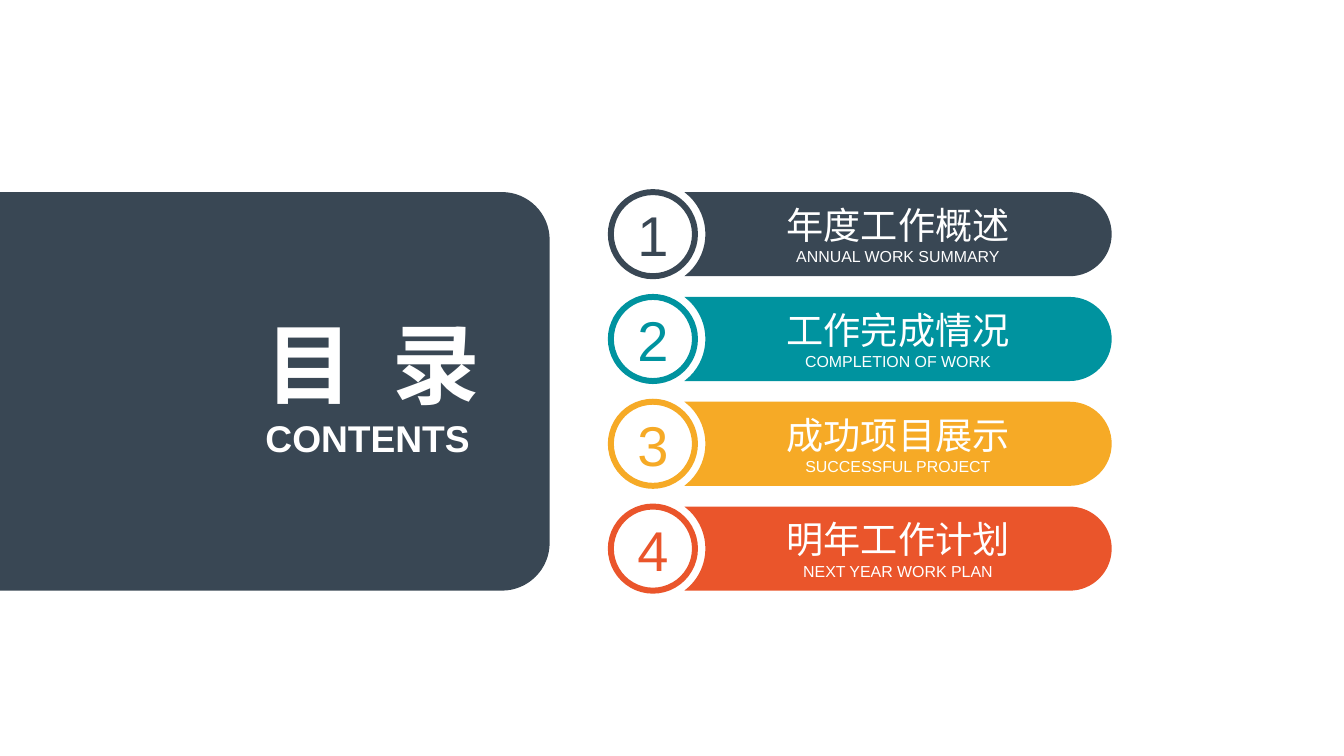
from math import cos, radians, sin, tan

from pptx import Presentation
from pptx.dml.color import RGBColor
from pptx.enum.shapes import MSO_SHAPE
from pptx.enum.text import MSO_ANCHOR, MSO_AUTO_SIZE, PP_ALIGN
from pptx.oxml.ns import qn
from pptx.oxml.xmlchemy import OxmlElement
from pptx.util import Inches, Pt

OVAL = MSO_SHAPE.OVAL
MIDDLE, TOP = MSO_ANCHOR.MIDDLE, MSO_ANCHOR.TOP
CENTER = PP_ALIGN.CENTER
NO_FIT = MSO_AUTO_SIZE.NONE

WHITE = RGBColor(0xFF, 0xFF, 0xFF)
SLATE = RGBColor(0x39, 0x47, 0x54)
TEAL = RGBColor(0x00, 0x93, 0x9F)
AMBER = RGBColor(0xF6, 0xAA, 0x26)
ORANGE = RGBColor(0xEA, 0x55, 0x2B)
FONT = "Arial"

# Content
TITLE = "目 录"
SUBTITLE = "CONTENTS"
CHAPTERS = [
    ("年度工作概述", "ANNUAL WORK SUMMARY", SLATE),
    ("工作完成情况", "COMPLETION OF WORK", TEAL),
    ("成功项目展示", "SUCCESSFUL PROJECT", AMBER),
    ("明年工作计划", "NEXT YEAR WORK PLAN", ORANGE),
]

# Layout in inches
PANEL_TOP, PANEL_W, PANEL_H, CORNER = 2.01, 5.75, 4.17, 0.5
BAR_LEFT, BAR_RIGHT, BAR_H = 7.16, 11.63, 0.88
BADGE_LEFT, NOTCH_R = 6.39, 0.55
PITCH = (PANEL_H - BAR_H) / (len(CHAPTERS) - 1)


def arc(cx, cy, radius, start, end):
    """Bezier points of an arc after its start; degrees clockwise from the right."""
    a, b = radians(start), radians(end)
    k = 4 / 3 * tan((b - a) / 4)
    return [(cx + radius * (cos(a) - k * sin(a)), cy + radius * (sin(a) + k * cos(a))),
            (cx + radius * (cos(b) + k * sin(b)), cy + radius * (sin(b) - k * cos(b))),
            (cx + radius * cos(b), cy + radius * sin(b))]


def paint(shape, fill, line=None):
    shape.shadow.inherit = False
    shape.fill.solid()
    shape.fill.fore_color.rgb = fill
    if line is None:
        shape.line.fill.background()
    else:
        shape.line.color.rgb = line
        shape.line.width = Pt(4.5)


def add_outline(s, start, segments, fill):
    """Draw segments of one point (straight) or three points (curve)."""
    builder = s.shapes.build_freeform(Inches(start[0]), Inches(start[1]), scale=1.0)
    builder.add_line_segments([(Inches(x), Inches(y)) for seg in segments for x, y in seg],
                              close=True)
    shape = builder.convert_to_shape()
    steps = iter(list(shape._element.iter(qn("a:lnTo"))))
    for seg in segments:
        group = [next(steps) for _ in seg]
        if len(group) == 3:
            curve = OxmlElement("a:cubicBezTo")
            group[0].addprevious(curve)
            for step in group:
                curve.append(step[0])
                step.getparent().remove(step)
    paint(shape, fill)
    return shape


def write(shape, lines, color, bold=False, anchor=MIDDLE):
    """Fill a shape with centred lines, each given as (text, size)."""
    tf = shape.text_frame
    tf.word_wrap = True
    tf.auto_size = NO_FIT
    tf.vertical_anchor = anchor
    tf.margin_left = tf.margin_top = tf.margin_right = tf.margin_bottom = 0
    for i, (text, size) in enumerate(lines):
        p = tf.add_paragraph() if i else tf.paragraphs[0]
        p.alignment = CENTER
        r = p.add_run()
        r.text = text
        r.font.name = FONT
        r.font.size = Pt(size)
        r.font.bold = bold
        r.font.color.rgb = color


prs = Presentation()
prs.slide_width, prs.slide_height = Inches(14.06), Inches(7.91)
s = prs.slides.add_slide(prs.slide_layouts[5])

# Panel with two rounded corners on the right
panel_bottom = PANEL_TOP + PANEL_H
corner_x = PANEL_W - CORNER
add_outline(s, (0, PANEL_TOP), [
    [(corner_x, PANEL_TOP)],
    arc(corner_x, PANEL_TOP + CORNER, CORNER, -90, 0),
    [(PANEL_W, panel_bottom - CORNER)],
    arc(corner_x, panel_bottom - CORNER, CORNER, 0, 90),
    [(0, panel_bottom)],
], SLATE)

# Chapter bars, notched around their numbered badges
radius = BAR_H / 2
bar_x, badge_x = BAR_RIGHT - radius, BADGE_LEFT + radius
notch_dx = NOTCH_R * cos(radians(45))
for n, (name, english, color) in enumerate(CHAPTERS):
    top = PANEL_TOP + n * PITCH
    mid, bottom = top + radius, top + BAR_H
    bar = add_outline(s, (BAR_LEFT, top), [
        [(bar_x, top)],
        arc(bar_x, mid, radius, -90, 0),
        arc(bar_x, mid, radius, 0, 90),
        [(BAR_LEFT, bottom)],
        [(badge_x + notch_dx, mid + notch_dx)],
        arc(badge_x, mid, NOTCH_R, 45, 0),
        arc(badge_x, mid, NOTCH_R, 0, -45),
    ], color)
    write(bar, [(name, 28), (english, 12)], WHITE)

    badge = s.shapes.add_shape(OVAL, Inches(BADGE_LEFT), Inches(top),
                               Inches(BAR_H), Inches(BAR_H))
    paint(badge, WHITE, color)
    write(badge, [(str(n + 1), 42.2)], color)

# Title with wide letter spacing, moved in front of the panel
title = s.shapes.title
title.left, title.top = Inches(2.33), Inches(3.24)
title.width, title.height = Inches(3.14), Inches(1.11)
write(title, [(TITLE, 66)], WHITE, bold=True)
title.text_frame.paragraphs[0].runs[0].font._element.set("spc", "725")
s.shapes._spTree.append(title._element)

subtitle = s.shapes.add_textbox(Inches(2.29), Inches(4.35), Inches(3.11), Inches(0.47))
write(subtitle, [(SUBTITLE, 28)], WHITE, bold=True, anchor=TOP)

prs.save("out.pptx")
